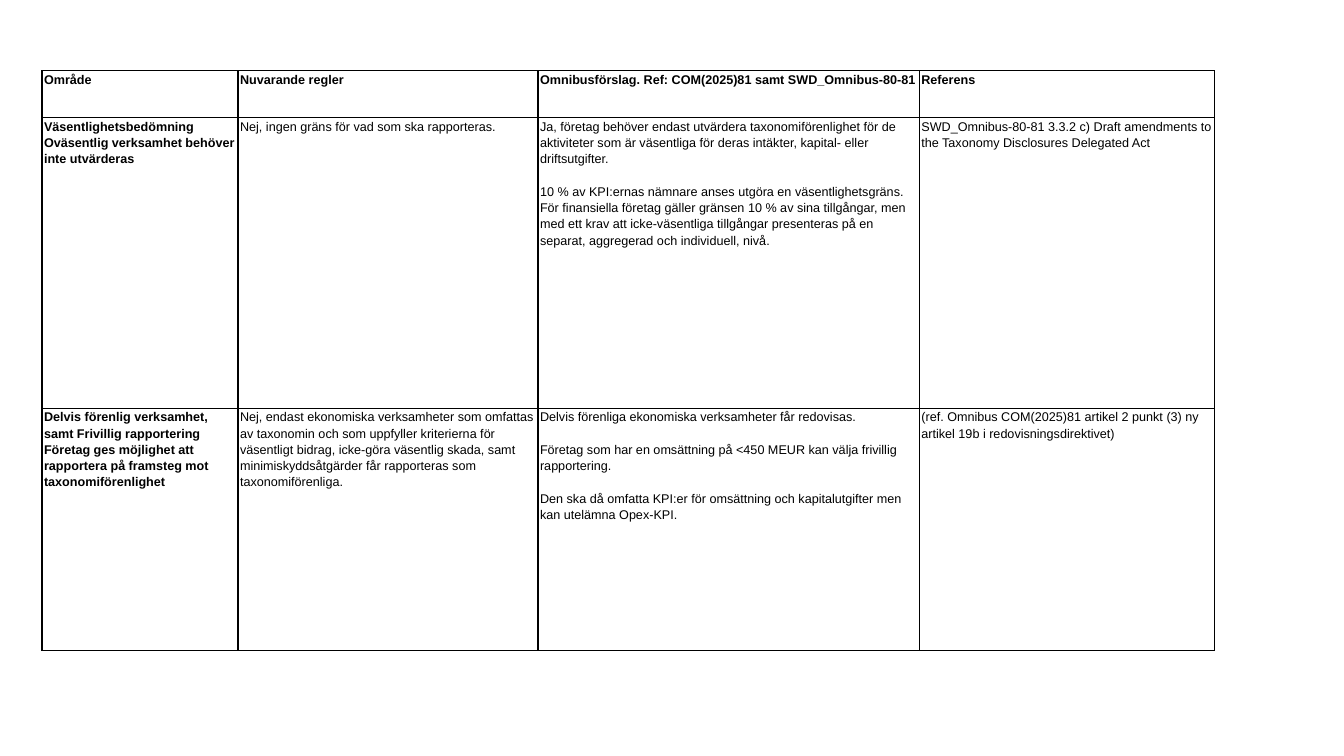
from dataclasses import dataclass

from lxml import etree
from pptx import Presentation
from pptx.dml.color import RGBColor
from pptx.enum.text import MSO_ANCHOR
from pptx.oxml.ns import qn
from pptx.util import Cm, Pt

TOP = MSO_ANCHOR.TOP
COLORS = {"text": "000000", "border": "000000", "cell": "FFFFFF"}
LEFT = 1.06
COL_WIDTHS = (4.94, 7.56, 9.61, 7.43)
TABLE_FLAGS = {"first_row": False, "horz_banding": False}
CELL_FORMAT = {
    "margin_left": Cm(0.05), "margin_right": Cm(0.05),
    "margin_top": 0, "margin_bottom": 0, "vertical_anchor": TOP,
}
FONT_FORMAT = {"name": "Arial", "size": Pt(9)}
LINE_SPACING = 1.15
PARAGRAPH_GAP = Pt(11.6)


@dataclass
class CellText:
    paragraphs: tuple[str, ...]
    bold: bool = False
    gap: int = PARAGRAPH_GAP


@dataclass
class RuleTable:
    top: float
    heights: tuple[float, ...]
    rows: tuple[tuple[CellText, ...], ...]


def heading(*lines: str) -> CellText:
    return CellText(lines, bold=True, gap=0)


def body(*paragraphs: str) -> CellText:
    return CellText(paragraphs)


TABLES = (
    RuleTable(2.97, (7.32, 6.1), (
        (
            heading("Väsentlighetsbedömning",
                    "Oväsentlig verksamhet behöver inte utvärderas"),
            body("Nej, ingen gräns för vad som ska rapporteras."),
            body("Ja, företag behöver endast utvärdera taxonomiförenlighet för de "
                 "aktiviteter som är väsentliga för deras intäkter, kapital- eller "
                 "driftsutgifter.",
                 "10 % av KPI:ernas nämnare anses utgöra en väsentlighetsgräns. "
                 "För finansiella företag gäller gränsen 10 % av sina tillgångar, men "
                 "med ett krav att icke-väsentliga tillgångar presenteras på en "
                 "separat, aggregerad och individuell, nivå."),
            body("SWD_Omnibus-80-81 3.3.2 c) Draft amendments to the Taxonomy "
                 "Disclosures Delegated Act"),
        ),
        (
            heading("Delvis förenlig verksamhet, samt Frivillig rapportering",
                    "Företag ges möjlighet att rapportera på framsteg mot "
                    "taxonomiförenlighet"),
            body("Nej, endast ekonomiska verksamheter som omfattas av taxonomin och "
                 "som uppfyller kriterierna för väsentligt bidrag, icke-göra väsentlig "
                 "skada, samt minimiskyddsåtgärder får rapporteras som "
                 "taxonomiförenliga."),
            body("Delvis förenliga ekonomiska verksamheter får redovisas.",
                 "Företag som har en omsättning på <450 MEUR kan välja frivillig "
                 "rapportering.",
                 "Den ska då omfatta KPI:er för omsättning och kapitalutgifter men "
                 "kan utelämna Opex-KPI."),
            body("(ref. Omnibus COM(2025)81 artikel 2 punkt (3) ny artikel 19b i "
                 "redovisningsdirektivet)"),
        ),
    )),
    RuleTable(1.78, (1.19,), (
        (
            heading("Område"),
            heading("Nuvarande regler"),
            heading("Omnibusförslag. Ref: COM(2025)81 samt SWD_Omnibus-80-81"),
            heading("Referens"),
        ),
    )),
)


def set_format(target, values: dict) -> None:
    for name, value in values.items():
        setattr(target, name, value)


def add_borders(cell) -> None:
    tc_pr = cell._tc.get_or_add_tcPr()
    for side in ("L", "R", "T", "B"):
        ln = etree.SubElement(tc_pr, qn(f"a:ln{side}"), w=str(Pt(1)))
        fill = etree.SubElement(ln, qn("a:solidFill"))
        etree.SubElement(fill, qn("a:srgbClr"), val=COLORS["border"])


def fill_cell(cell, content: CellText) -> None:
    set_format(cell, CELL_FORMAT)
    add_borders(cell)
    cell.fill.solid()
    cell.fill.fore_color.rgb = RGBColor.from_string(COLORS["cell"])
    tf = cell.text_frame
    for i, text in enumerate(content.paragraphs):
        p = tf.add_paragraph() if i else tf.paragraphs[0]
        p.line_spacing = LINE_SPACING
        p.space_after = content.gap
        r = p.add_run()
        r.text = text
        set_format(r.font, FONT_FORMAT | {"bold": content.bold})
        r.font.color.rgb = RGBColor.from_string(COLORS["text"])


def add_rule_table(slide, spec_table: RuleTable) -> None:
    frame = slide.shapes.add_table(
        len(spec_table.rows), len(COL_WIDTHS), Cm(LEFT), Cm(spec_table.top),
        Cm(sum(COL_WIDTHS)), Cm(sum(spec_table.heights)))
    table = frame.table
    set_format(table, TABLE_FLAGS)
    for column, width in zip(table.columns, COL_WIDTHS):
        column.width = Cm(width)
    for row, height, contents in zip(table.rows, spec_table.heights, spec_table.rows):
        row.height = Cm(height)
        for cell, content in zip(row.cells, contents):
            fill_cell(cell, content)


def main() -> None:
    prs = Presentation()
    prs.slide_width, prs.slide_height = Cm(33.87), Cm(19.05)
    slide = prs.slides.add_slide(prs.slide_layouts[6])
    for rule_table in TABLES:
        add_rule_table(slide, rule_table)
    prs.save("out.pptx")


if __name__ == "__main__":
    main()
